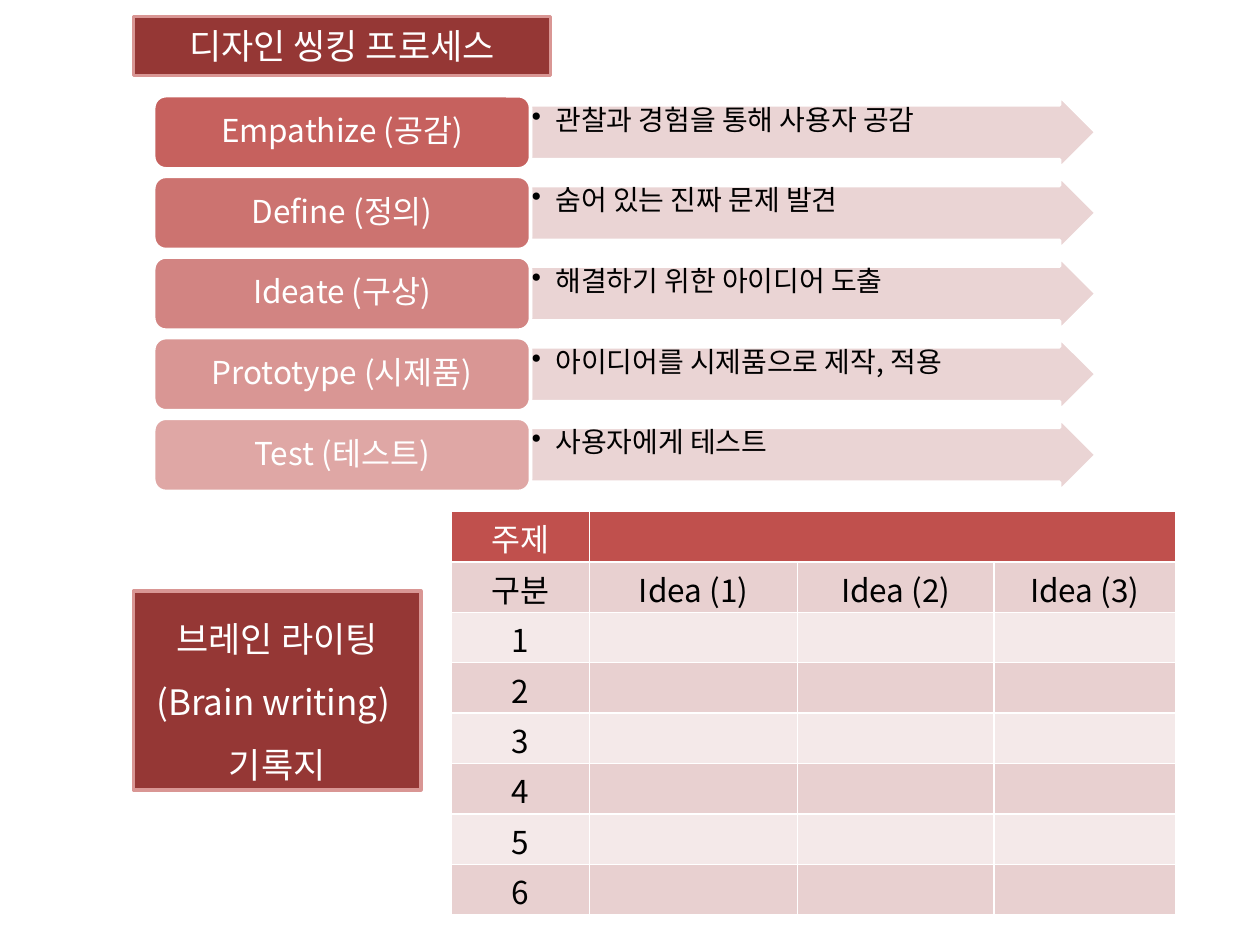
import pptx
import pptx.util
from lxml import etree
from pptx.dml.color import RGBColor
from pptx.enum.shapes import MSO_SHAPE
from pptx.enum.text import MSO_ANCHOR, PP_ALIGN
from pptx.oxml.ns import qn
from pptx.util import Inches, Pt

FONT = "Noto Sans CJK KR"
COLORS = {
    "title": "953735",
    "title_line": "D99694",
    "accent": "C0504D",
    "band": "E8D0D0",
    "light_band": "F4E9E9",
    "white": "FFFFFF",
    "black": "000000",
}
STEPS = [
    ("Empathize (공감)", "관찰과 경험을 통해 사용자 공감"),
    ("Define (정의)", "숨어 있는 진짜 문제 발견"),
    ("Ideate (구상)", "해결하기 위한 아이디어 도출"),
    ("Prototype (시제품)", "아이디어를 시제품으로 제작, 적용"),
    ("Test (테스트)", "사용자에게 테스트"),
]
IDEA_ROWS = [
    ["주제", "", "", ""],
    ["구분", "Idea (1)", "Idea (2)", "Idea (3)"],
] + [[str(number), "", "", ""] for number in range(1, 7)]


def rgb(name):
    return RGBColor.from_string(COLORS[name])


def style_paragraph(paragraph, size, color, align=PP_ALIGN.CENTER, spacing=None):
    paragraph.alignment = align
    paragraph.line_spacing = spacing
    font = paragraph.font
    font.name, font.size = FONT, Pt(size)
    font.color.rgb = rgb(color)
    properties = paragraph._p.get_or_add_pPr().find(qn("a:defRPr"))
    etree.SubElement(properties, qn("a:ea"), typeface=FONT)


def add_block(slide, kind, box, fill, line, opacity=100):
    """Add a filled preset shape at box, given as left, top, width, height."""
    block = slide.shapes.add_shape(kind, *box)
    block.shadow.inherit = False
    block.fill.solid()
    block.fill.fore_color.rgb = rgb(fill)
    block.line.color.rgb = rgb(line)
    block.line.width = Pt(2)
    if opacity < 100:
        color = block._element.spPr.find(qn("a:solidFill"))[0]
        etree.SubElement(color, qn("a:alpha"), val=str(opacity * 1000))
    block.text_frame.word_wrap = True
    block.text_frame.vertical_anchor = MSO_ANCHOR.MIDDLE
    return block


def set_margins(frame, side, top):
    frame.margin_left = frame.margin_right = Inches(side)
    frame.margin_top = frame.margin_bottom = Inches(top)


def add_heading(slide, box, text, spacing=None):
    heading = add_block(slide, MSO_SHAPE.RECTANGLE, box, "title", "title_line")
    heading.text_frame.text = text
    for paragraph in heading.text_frame.paragraphs:
        style_paragraph(paragraph, 20, "white", spacing=spacing)


def add_bullet(paragraph):
    properties = paragraph._p.get_or_add_pPr()
    properties.set("marL", str(Inches(0.19)))
    properties.set("indent", str(-Inches(0.19)))
    bullet = etree.Element(qn("a:buChar"), char="•")
    properties.find(qn("a:defRPr")).addprevious(bullet)


def add_step(slide, box, name, description, opacity):
    left, top, width, height = box
    name_width = Inches(2.99)

    arrow_box = (left + name_width, top, width - name_width, height)
    arrow = add_block(slide, MSO_SHAPE.RIGHT_ARROW, arrow_box, "band", "white", 90)
    arrow.adjustments[0] = 0.75
    frame = arrow.text_frame
    frame.vertical_anchor = MSO_ANCHOR.TOP
    set_margins(frame, 0.01, 0.01)
    frame.text = description
    style_paragraph(frame.paragraphs[0], 16, "black", PP_ALIGN.LEFT, 0.9)
    add_bullet(frame.paragraphs[0])

    name_box = (left, top, name_width, height)
    label = add_block(slide, MSO_SHAPE.ROUNDED_RECTANGLE, name_box, "accent", "white", opacity)
    set_margins(label.text_frame, 0.07, 0.04)
    label.text_frame.text = name
    style_paragraph(label.text_frame.paragraphs[0], 18, "white", spacing=0.9)


def add_process(slide, box):
    left, top, width, height = box
    step_height = Inches(0.58)
    pitch = (height - step_height) // (len(STEPS) - 1)
    for index, (name, description) in enumerate(STEPS):
        step_box = (left, top + index * pitch, width, step_height)
        add_step(slide, step_box, name, description, 90 - 10 * index)


def add_cell_borders(cell):
    properties = cell._tc.get_or_add_tcPr()
    for position, side in enumerate(("a:lnL", "a:lnR", "a:lnT", "a:lnB")):
        border = etree.Element(qn(side), w=str(Pt(1)))
        fill = etree.SubElement(border, qn("a:solidFill"))
        etree.SubElement(fill, qn("a:srgbClr"), val=COLORS["white"])
        properties.insert(position, border)


def add_idea_table(slide, box):
    table = slide.shapes.add_table(len(IDEA_ROWS), len(IDEA_ROWS[0]), *box).table
    for column, width in zip(table.columns, (1.1, 1.65, 1.56, 1.44)):
        column.width = Inches(width)
    for row_index, texts in enumerate(IDEA_ROWS):
        band = "band" if row_index % 2 else "light_band"
        fill, color = (band, "black") if row_index else ("accent", "white")
        for column_index, text in enumerate(texts):
            cell = table.cell(row_index, column_index)
            cell.fill.solid()
            cell.fill.fore_color.rgb = rgb(fill)
            add_cell_borders(cell)
            # Slim margins let an 18 pt line fit the row height.
            cell.margin_top, cell.margin_bottom = Inches(0.03), 0
            cell.text = text
            style_paragraph(cell.text_frame.paragraphs[0], 18, color)
    table.cell(0, 1).merge(table.cell(0, 3))


def main():
    deck = pptx.Presentation()
    deck.slide_width, deck.slide_height = Inches(10), Inches(7.5)
    slide = deck.slides.add_slide(deck.slide_layouts[6])

    def box(*lengths):
        return [Inches(length) for length in lengths]

    add_heading(slide, box(1.06, 0.13, 3.31, 0.47), "디자인 씽킹 프로세스")
    add_process(slide, box(1.22, 0.76, 7.48, 3.14))
    add_heading(slide, box(1.06, 4.69, 2.28, 1.58),
                "브레인 라이팅\n(Brain writing) \n기록지", spacing=1.5)
    add_idea_table(slide, box(3.58, 4.06, 5.75, 3.2))
    deck.save("out.pptx")


if __name__ == "__main__":
    main()
